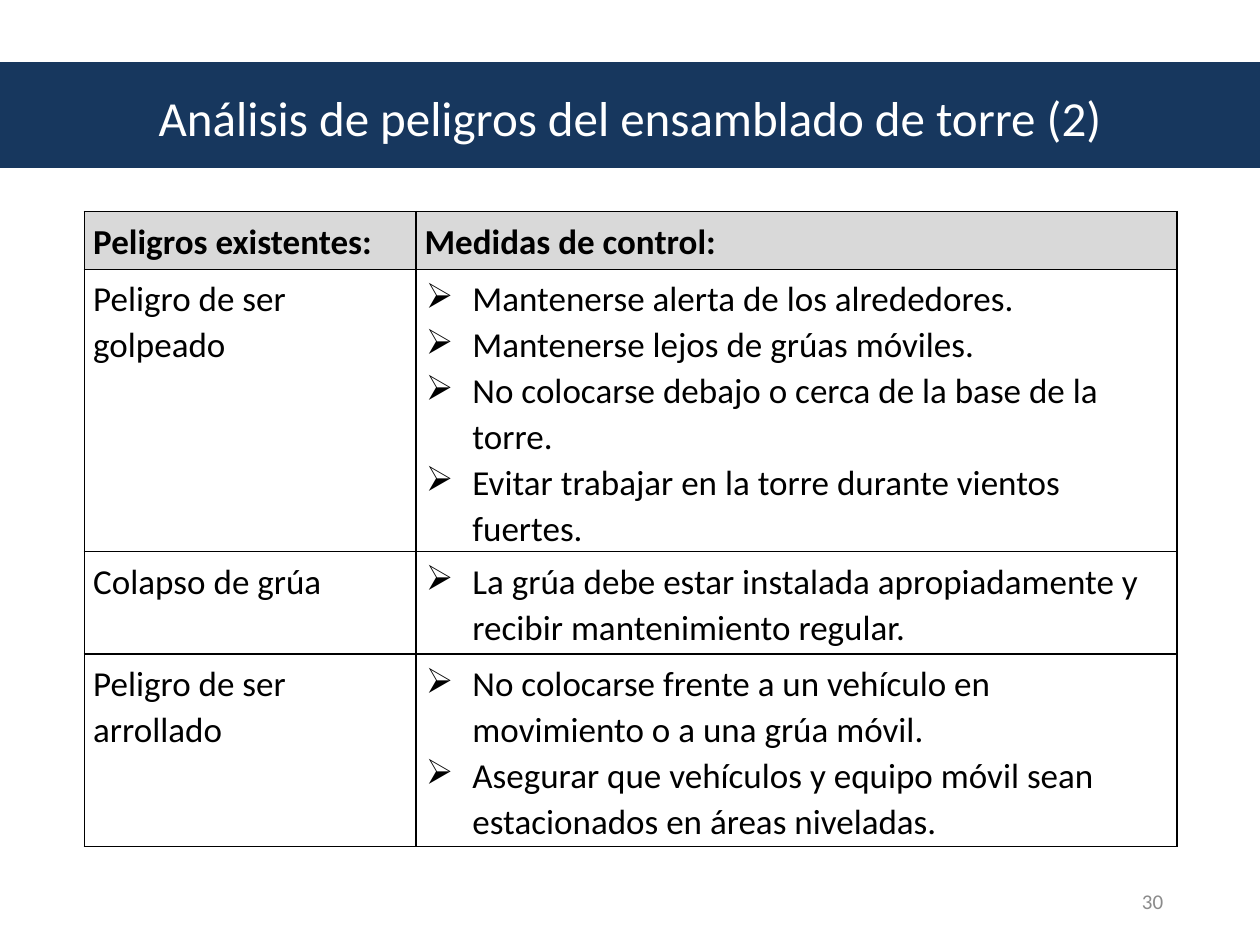
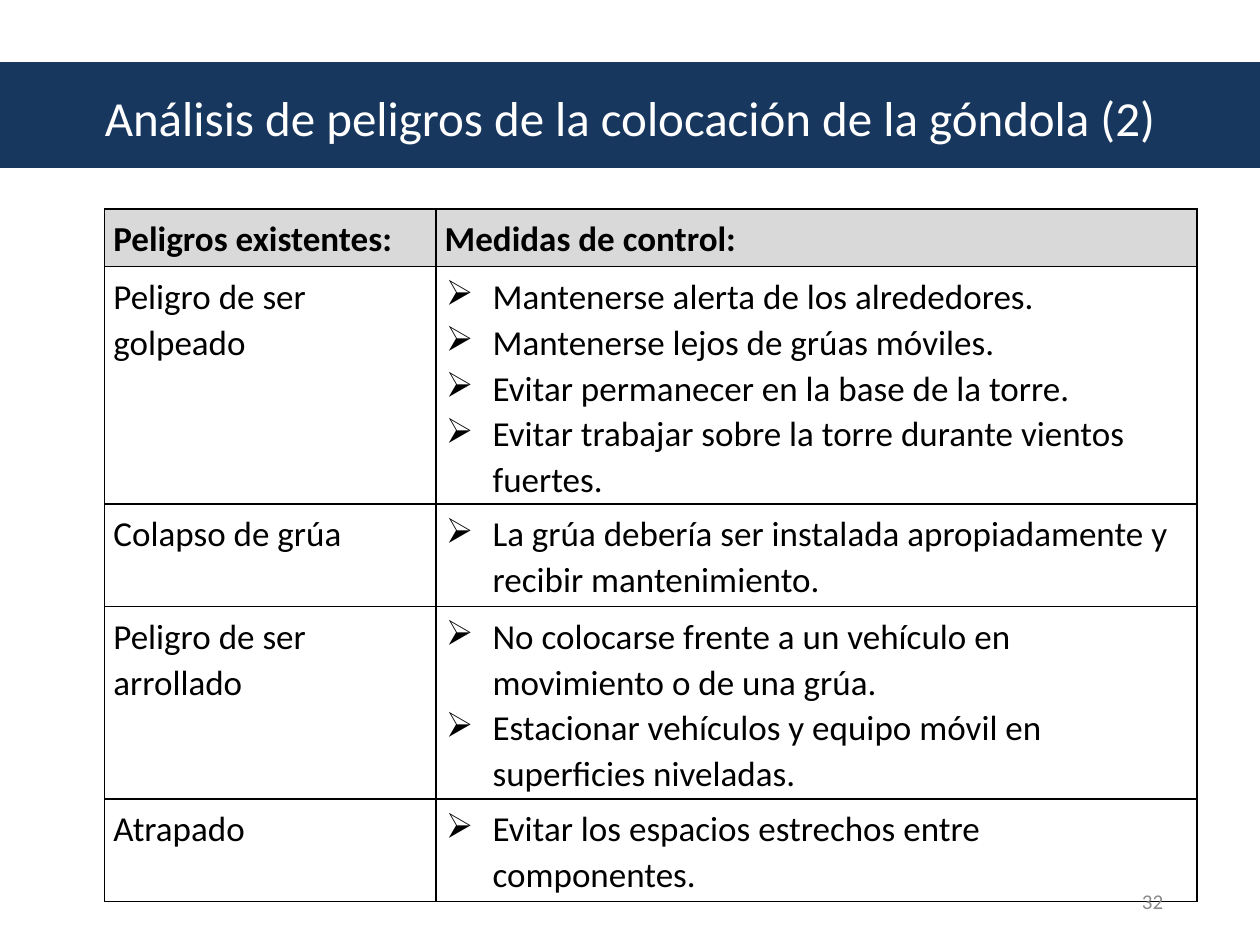
from dataclasses import dataclass

from lxml import etree
from pptx import Presentation
from pptx.dml.color import RGBColor
from pptx.enum.shapes import MSO_SHAPE
from pptx.enum.text import MSO_ANCHOR, PP_ALIGN
from pptx.oxml.ns import qn
from pptx.util import Inches, Pt

RECTANGLE = MSO_SHAPE.RECTANGLE
MIDDLE = MSO_ANCHOR.MIDDLE
LEFT, CENTER, RIGHT = PP_ALIGN.LEFT, PP_ALIGN.CENTER, PP_ALIGN.RIGHT


@dataclass(frozen=True)
class Theme:
    font: str = "Calibri"
    navy: str = "17375E"
    white: str = "FFFFFF"
    black: str = "000000"
    header_gray: str = "D9D9D9"
    number_gray: str = "8B8B8B"
    title_size: int = 28
    body_size: int = 20
    number_size: int = 12
    line_spacing: float = 1.07
    border_width: float = 0.96
    bullet: str = "➢"


HEADERS = ("Peligros existentes:", "Medidas de control:")
COLUMN_WIDTHS = (2.63, 6.04)
CELL_MARGIN = 0.07

SLIDES = [
    {
        "title": "Análisis de peligros del ensamblado de torre (2)",
        "number": "30",
        "position": (0.67, 1.68),
        "row_heights": (0.41, 2.21, 0.73, 1.47),
        "hazards": [
            ("Peligro de ser golpeado", [
                "Mantenerse alerta de los alrededores.",
                "Mantenerse lejos de grúas móviles.",
                "No colocarse debajo o cerca de la base de la torre.",
                "Evitar trabajar en la torre durante vientos fuertes.",
            ]),
            ("Colapso de grúa", [
                "La grúa debe estar instalada apropiadamente y recibir mantenimiento regular.",
            ]),
            ("Peligro de ser arrollado", [
                "No colocarse frente a un vehículo en movimiento o a una grúa móvil.",
                "Asegurar que vehículos y equipo móvil sean estacionados en áreas niveladas.",
            ]),
        ],
    },
    {
        "title": "Análisis de peligros de la colocación de la góndola (2)",
        "number": "32",
        "position": (0.83, 1.66),
        "row_heights": (0.4, 1.59, 0.7, 1.29, 0.7),
        "hazards": [
            ("Peligro de ser golpeado", [
                "Mantenerse alerta de los alrededores.",
                "Mantenerse lejos de grúas móviles.",
                "Evitar permanecer en la base de la torre.",
                "Evitar trabajar sobre la torre durante vientos fuertes.",
            ]),
            ("Colapso de grúa", [
                "La grúa debería ser instalada apropiadamente y recibir mantenimiento.",
            ]),
            ("Peligro de ser arrollado", [
                "No colocarse frente a un vehículo en movimiento o de una grúa.",
                "Estacionar vehículos y equipo móvil en superficies niveladas.",
            ]),
            ("Atrapado", [
                "Evitar los espacios estrechos entre componentes.",
            ]),
        ],
    },
]


class DeckBuilder:
    def __init__(self, presentation, theme):
        self.presentation = presentation
        self.theme = theme
        self.slide = None

    def new_slide(self):
        self.slide = self.presentation.slides.add_slide(self.presentation.slide_layouts[6])

    def band(self, left, top, width, height):
        shape = self.slide.shapes.add_shape(
            RECTANGLE, Inches(left), Inches(top), Inches(width), Inches(height))
        shape.shadow.inherit = False
        color = RGBColor.from_string(self.theme.navy)
        shape.fill.solid()
        shape.fill.fore_color.rgb = color
        shape.line.color.rgb = color
        shape.line.width = Pt(0.75)

    def run(self, paragraph, text, size, color, bold=False):
        run = paragraph.add_run()
        run.text = text
        run.font.name = self.theme.font
        run.font.size = Pt(size)
        run.font.bold = bold
        run.font.color.rgb = RGBColor.from_string(color)

    def text(self, text, left, top, width, height, size, color, alignment):
        box = self.slide.shapes.add_textbox(
            Inches(left), Inches(top), Inches(width), Inches(height))
        frame = box.text_frame
        frame.word_wrap = True
        frame.vertical_anchor = MIDDLE
        paragraph = frame.paragraphs[0]
        paragraph.alignment = alignment
        self.run(paragraph, text, size, color)

    def bullet(self, paragraph):
        properties = paragraph._p.get_or_add_pPr()
        properties.set("marL", str(Inches(0.38)))
        properties.set("indent", str(Inches(-0.37)))
        bullet_color = etree.SubElement(properties, qn("a:buClr"))
        etree.SubElement(bullet_color, qn("a:srgbClr"), val=self.theme.black)
        etree.SubElement(properties, qn("a:buChar"), char=self.theme.bullet)

    def borders(self, cell):
        properties = cell._tc.get_or_add_tcPr()
        for side in ("lnL", "lnR", "lnT", "lnB"):
            line = etree.SubElement(
                properties, qn(f"a:{side}"), w=str(Pt(self.theme.border_width)))
            fill = etree.SubElement(line, qn("a:solidFill"))
            etree.SubElement(fill, qn("a:srgbClr"), val=self.theme.black)

    def cell(self, cell, lines, header=False, bulleted=False):
        cell.margin_left = cell.margin_right = Inches(CELL_MARGIN)
        self.borders(cell)
        if header:
            cell.fill.solid()
            cell.fill.fore_color.rgb = RGBColor.from_string(self.theme.header_gray)
        else:
            cell.fill.background()
        frame = cell.text_frame
        for index, line in enumerate(lines):
            paragraph = frame.add_paragraph() if index else frame.paragraphs[0]
            paragraph.alignment = LEFT
            paragraph.line_spacing = self.theme.line_spacing
            if bulleted:
                self.bullet(paragraph)
            self.run(paragraph, line, self.theme.body_size, self.theme.black, header)

    def hazard_table(self, position, row_heights, hazards):
        left, top = position
        table = self.slide.shapes.add_table(
            len(row_heights), len(COLUMN_WIDTHS), Inches(left), Inches(top),
            Inches(sum(COLUMN_WIDTHS)), Inches(sum(row_heights))).table
        table.first_row = table.horz_banding = False
        for column, width in zip(table.columns, COLUMN_WIDTHS):
            column.width = Inches(width)
        for row, height in zip(table.rows, row_heights):
            row.height = Inches(height)
        for column_index, header in enumerate(HEADERS):
            self.cell(table.cell(0, column_index), [header], header=True)
        for row_index, (hazard, controls) in enumerate(hazards, start=1):
            self.cell(table.cell(row_index, 0), [hazard])
            self.cell(table.cell(row_index, 1), controls, bulleted=True)

    def hazard_slide(self, title, number, position, row_heights, hazards):
        theme = self.theme
        self.new_slide()
        self.band(0, 0.5, 10, 0.83)
        self.text(title, 0.5, 0.3, 9, 1.25, theme.title_size, theme.white, CENTER)
        self.hazard_table(position, row_heights, hazards)
        self.text(number, 7, 6.95, 2.33, 0.4, theme.number_size, theme.number_gray, RIGHT)


def main():
    presentation = Presentation()
    presentation.slide_width = Inches(10)
    presentation.slide_height = Inches(7.5)
    builder = DeckBuilder(presentation, Theme())
    for content in SLIDES:
        builder.hazard_slide(**content)
    presentation.save("out.pptx")


if __name__ == "__main__":
    main()
